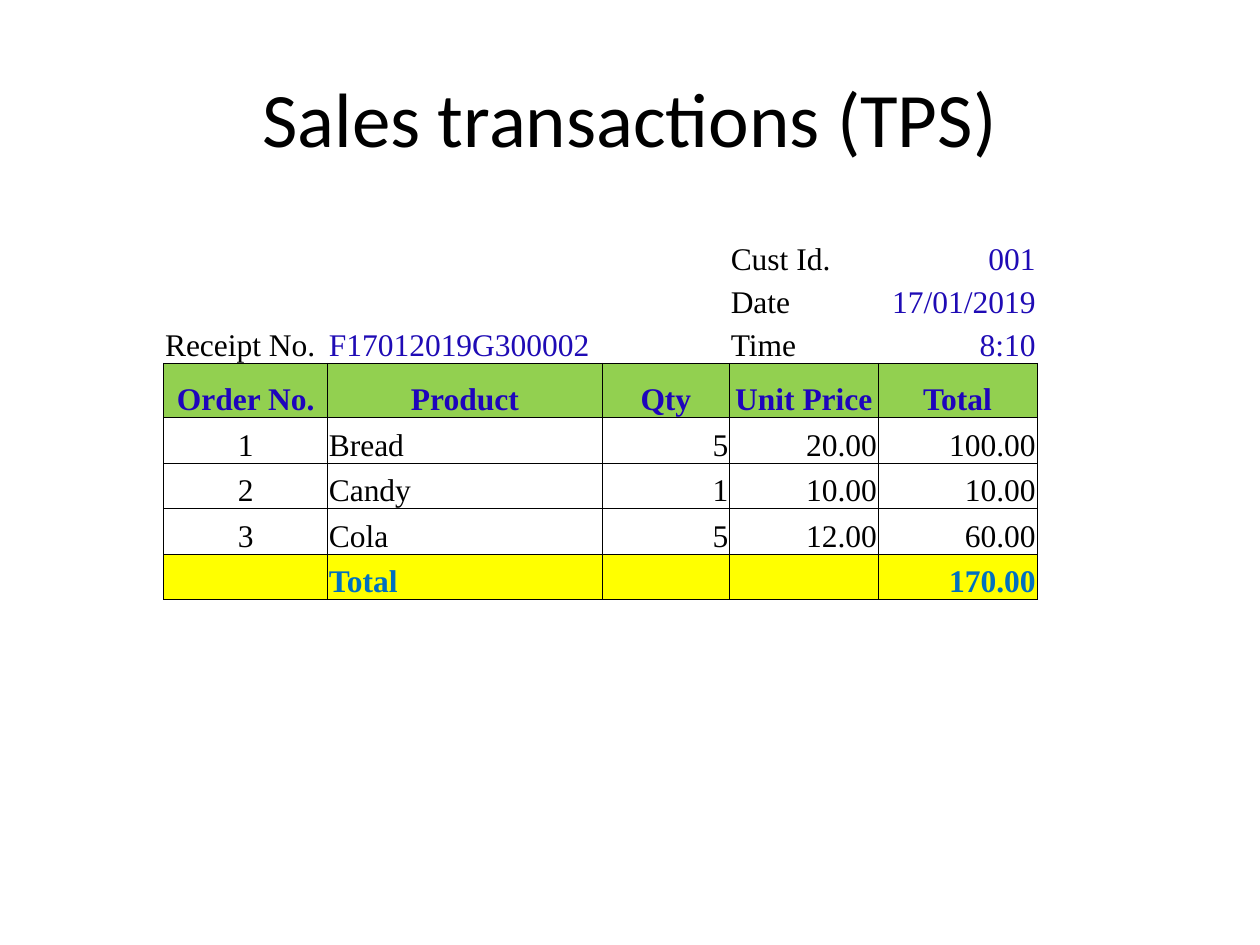
from dataclasses import dataclass

from lxml.etree import SubElement
from pptx import Presentation
from pptx.dml.color import RGBColor as Color
from pptx.enum.text import MSO_ANCHOR as Anchor, PP_ALIGN as Align
from pptx.oxml.ns import qn
from pptx.util import Inches, Pt


@dataclass(frozen=True)
class Theme:
    title_font: str = "Calibri"
    table_font: str = "Times New Roman"
    title_size: int = 44
    table_size: int = 18
    border_width: float = 0.5
    text: str = "000000"
    value: str = "1F0BB5"
    header: str = "1E04BC"
    total: str = "0070C0"
    header_fill: str = "92D050"
    total_fill: str = "FFFF00"


THEME = Theme()

COLUMN_WIDTHS = [1.3, 2.18, 1.01, 1.18, 1.26]
ROW_HEIGHTS = [0.34] * 3 + [0.43] + [0.36] * 4
DETAILS = [
    ["", "", "", "Cust Id.", "001"],
    ["", "", "", "Date", "17/01/2019"],
    ["Receipt No.", "F17012019G300002", "", "Time", "8:10"],
]
HEADER = ["Order No.", "Product", "Qty", "Unit Price", "Total"]
ORDERS = [
    ["1", "Bread", "5", "20.00", "100.00"],
    ["2", "Candy", "1", "10.00", "10.00"],
    ["3", "Cola", "5", "12.00", "60.00"],
]
TOTAL = ["", "Total", "", "", "170.00"]

DETAIL_ALIGNS = [Align.LEFT] * 4 + [Align.RIGHT]
HEADER_ALIGNS = [Align.CENTER] * 5
ORDER_ALIGNS = [Align.CENTER, Align.LEFT] + [Align.RIGHT] * 3
DETAIL_COLORS = [THEME.text, THEME.value, THEME.text, THEME.text, THEME.value]


def add_run(paragraph, text, font, size, color, bold=False):
    run = paragraph.add_run()
    run.text = text
    run.font.name = font
    run.font.size = Pt(size)
    run.font.bold = bold
    run.font.color.rgb = Color.from_string(color)


def set_borders(cell, visible):
    """Draw the named sides (L, R, T, B) and clear the others."""
    properties = cell._tc.get_or_add_tcPr()
    for side in "LRTB":
        line = SubElement(properties, qn(f"a:ln{side}"),
                          w=str(Pt(THEME.border_width)))
        if side in visible:
            fill = SubElement(line, qn("a:solidFill"))
            SubElement(fill, qn("a:srgbClr"), val=THEME.text)
        else:
            SubElement(line, qn("a:noFill"))


def fill_cell(cell, text, align, color, bold, fill, borders):
    set_borders(cell, borders)
    if fill:
        cell.fill.solid()
        cell.fill.fore_color.rgb = Color.from_string(fill)
    else:
        cell.fill.background()
    cell.vertical_anchor = Anchor.BOTTOM
    cell.margin_left = cell.margin_right = cell.margin_top = Inches(0.01)
    cell.margin_bottom = 0
    paragraph = cell.text_frame.paragraphs[0]
    paragraph.alignment = align
    if text:
        add_run(paragraph, text, THEME.table_font, THEME.table_size, color, bold)


def add_title(slide, text, left, top, width, height):
    title = slide.shapes.title
    title.left, title.top = Inches(left), Inches(top)
    title.width, title.height = Inches(width), Inches(height)
    title.text_frame.vertical_anchor = Anchor.MIDDLE
    paragraph = title.text_frame.paragraphs[0]
    paragraph.alignment = Align.CENTER
    add_run(paragraph, text, THEME.title_font, THEME.title_size, THEME.text)


def add_receipt(slide, left, top, width, height):
    # Each row: texts, alignments, colours, bold, fill, visible borders
    rows = [(texts, DETAIL_ALIGNS, DETAIL_COLORS, False, None, borders)
            for texts, borders in zip(DETAILS, ["", "", "B"])]
    rows.append((HEADER, HEADER_ALIGNS, [THEME.header] * 5, True,
                 THEME.header_fill, "LRTB"))
    rows += [(texts, ORDER_ALIGNS, [THEME.text] * 5, False, None, "LRTB")
             for texts in ORDERS]
    rows.append((TOTAL, ORDER_ALIGNS, [THEME.total] * 5, True,
                 THEME.total_fill, "LRTB"))

    table = slide.shapes.add_table(
        len(rows), len(COLUMN_WIDTHS),
        Inches(left), Inches(top), Inches(width), Inches(height)).table
    table.first_row = table.horz_banding = False

    # Column and row sizes, scaled to the given box
    for column, share in zip(table.columns, COLUMN_WIDTHS):
        column.width = Inches(width * share / sum(COLUMN_WIDTHS))
    for row, share in zip(table.rows, ROW_HEIGHTS):
        row.height = Inches(height * share / sum(ROW_HEIGHTS))

    for row, (texts, aligns, colors, bold, fill, borders) in zip(table.rows, rows):
        for cell, text, align, color in zip(row.cells, texts, aligns, colors):
            fill_cell(cell, text, align, color, bold, fill, borders)


def main():
    presentation = Presentation()
    presentation.slide_width = Inches(10)
    presentation.slide_height = Inches(7.5)
    slide = presentation.slides.add_slide(presentation.slide_layouts[5])
    add_title(slide, "Sales transactions (TPS)", 0.5, 0.3, 9, 1.25)
    add_receipt(slide, 1.3, 1.86, 6.93, 2.9)
    presentation.save("out.pptx")


if __name__ == "__main__":
    main()
